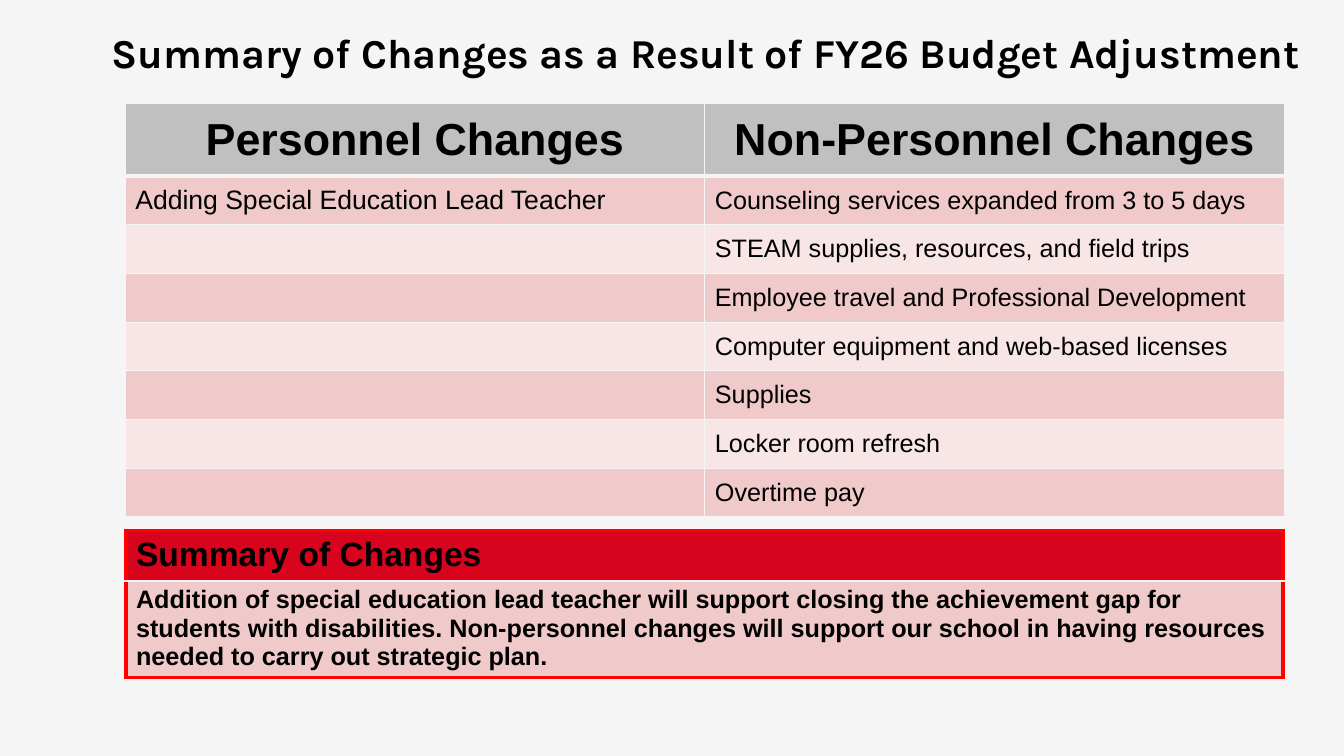
"""Build the budget adjustment summary slide."""
from lxml.etree import SubElement
from pptx import Presentation
from pptx.dml.color import RGBColor
from pptx.enum.text import MSO_ANCHOR, MSO_AUTO_SIZE, PP_ALIGN
from pptx.oxml.ns import qn
from pptx.util import Pt

BLACK, GREY, PAPER = "000000", "C0C0C0", "F5F5F5"
CRIMSON, RED, ROSE, BLUSH = "D8031C", "FF0000", "F0CACB", "F8E6E7"

PERSONNEL = ["Adding Special Education Lead Teacher"]
NON_PERSONNEL = [
    "Counseling services expanded from 3 to 5 days",
    "STEAM supplies, resources, and field trips",
    "Employee travel and Professional Development",
    "Computer equipment and web-based licenses",
    "Supplies",
    "Locker room refresh",
    "Overtime pay",
]
SUMMARY = (
    "Addition of special education lead teacher will support closing the "
    "achievement gap for students with disabilities. Non-personnel changes "
    "will support our school in having resources needed to carry out "
    "strategic plan."
)


def paint(color, value):
    """Set a colour format from a hex string."""
    color.rgb = RGBColor.from_string(value)


def write(frame, text, size=18, font="Arial", bold=False, align=PP_ALIGN.LEFT):
    """Put one formatted paragraph into a text frame."""
    para = frame.paragraphs[0]
    para.alignment = align
    span = para.add_run()
    span.text = text
    span.font.size = Pt(size)
    span.font.name = font
    span.font.bold = bold
    paint(span.font.color, BLACK)


def draw_border(cell, side, value, width):
    """Draw one side (L, R, T or B) of a table cell."""
    properties = cell._tc.get_or_add_tcPr()
    line = SubElement(properties, qn(f"a:ln{side}"), w=str(Pt(width)))
    fill = SubElement(line, qn("a:solidFill"))
    SubElement(fill, qn("a:srgbClr"), val=value)


class SlideBuilder:
    """Hold the deck and its current page."""

    def __init__(self, width, height):
        """Start a deck with one title-only page."""
        self.deck = Presentation()
        self.deck.slide_width, self.deck.slide_height = Pt(width), Pt(height)
        self.page = self.deck.slides.add_slide(self.deck.slide_layouts[5])
        fill = self.page.background.fill
        fill.solid()
        paint(fill.fore_color, PAPER)

    def add_title(self, text, left, top, width, height):
        """Place and fill the title placeholder."""
        box = self.page.shapes.title
        box.left, box.top = Pt(left), Pt(top)
        box.width, box.height = Pt(width), Pt(height)
        frame = box.text_frame
        frame.word_wrap = True
        frame.auto_size = MSO_AUTO_SIZE.NONE
        frame.vertical_anchor = MSO_ANCHOR.TOP
        write(frame, text, 29.3, "Karla", True, PP_ALIGN.CENTER)

    def add_grid(self, left, top, widths, heights):
        """Add a table without banding and return it."""
        grid = self.page.shapes.add_table(
            len(heights), len(widths), Pt(left), Pt(top),
            Pt(sum(widths)), Pt(sum(heights))).table
        grid.first_row = grid.horz_banding = False
        for column, width in zip(grid.columns, widths):
            column.width = Pt(width)
        for row, height in zip(grid.rows, heights):
            row.height = Pt(height)
        return grid

    def fill_cell(self, cell, text, fill, borders, anchor, **style):
        """Give a cell its borders, fill and text."""
        for side, (value, width) in borders.items():
            draw_border(cell, side, value, width)
        cell.fill.solid()
        paint(cell.fill.fore_color, fill)
        cell.vertical_anchor = anchor
        if text:
            write(cell.text_frame, text, **style)

    def add_changes(self, left, top):
        """Add the two-column table of changes."""
        count = len(NON_PERSONNEL)
        grid = self.add_grid(left, top, [414, 414], [51.8] + [34.8] * count)
        columns = [
            ("Personnel Changes", PERSONNEL, 19),
            ("Non-Personnel Changes", NON_PERSONNEL, 18),
        ]
        thin, thick = (PAPER, 1), (PAPER, 3)
        for index, (heading, items, size) in enumerate(columns):
            self.fill_cell(
                grid.cell(0, index), heading, GREY,
                {"L": thin, "R": thin, "T": thin, "B": thick},
                MSO_ANCHOR.MIDDLE, size=32, bold=True, align=PP_ALIGN.CENTER)
            for row in range(1, count + 1):
                self.fill_cell(
                    grid.cell(row, index),
                    items[row - 1] if row <= len(items) else "",
                    ROSE if row % 2 else BLUSH,
                    {"L": thin, "R": thin,
                     "T": thick if row == 1 else thin, "B": thin},
                    MSO_ANCHOR.MIDDLE, size=size)

    def add_summary(self, left, top):
        """Add the red-framed summary table."""
        grid = self.add_grid(left, top, [826.6], [36, 69])
        frame, divider = (RED, 3), (PAPER, 1)
        rows = [
            ("Summary of Changes", CRIMSON, 24, frame, divider),
            (SUMMARY, ROSE, 18, divider, frame),
        ]
        for index, (text, fill, size, upper, lower) in enumerate(rows):
            self.fill_cell(
                grid.cell(index, 0), text, fill,
                {"L": frame, "R": frame, "T": upper, "B": lower},
                MSO_ANCHOR.TOP, size=size, bold=True)


def main():
    """Build and save the deck."""
    builder = SlideBuilder(960, 540)
    builder.add_title(
        "Summary of Changes as a Result of FY26 Budget Adjustment",
        72, 16, 864, 66)
    builder.add_changes(89.5, 74)
    builder.add_summary(90, 379)
    builder.deck.save("out.pptx")


if __name__ == "__main__":
    main()
